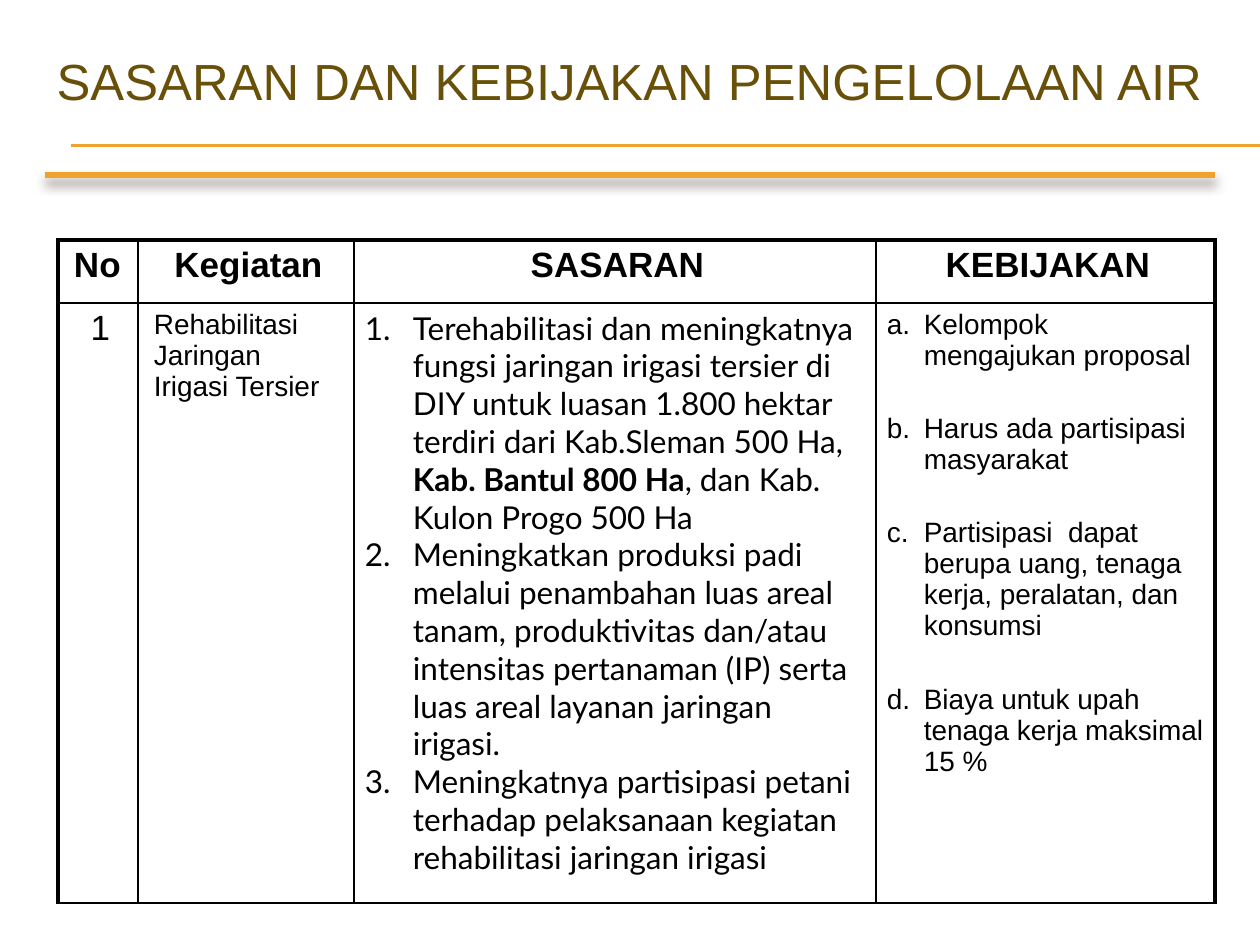
from lxml import etree
from pptx import Presentation
from pptx.dml.color import RGBColor
from pptx.enum.shapes import MSO_CONNECTOR
from pptx.enum.text import MSO_ANCHOR, PP_ALIGN
from pptx.oxml import parse_xml
from pptx.oxml.ns import nsdecls, qn
from pptx.util import Emu, Pt

BLACK = RGBColor(0x00, 0x00, 0x00)
WHITE = RGBColor(0xFF, 0xFF, 0xFF)
BROWN = RGBColor(0x69, 0x50, 0x08)
ORANGE = RGBColor(0xF0, 0xA2, 0x2E)
SHADOW = RGBColor(0x4E, 0x3B, 0x30)

TITLE = "SASARAN DAN KEBIJAKAN PENGELOLAAN AIR"
HEADERS = ["No", "Kegiatan", "SASARAN", "KEBIJAKAN"]
NUMBER = "1"
ACTIVITY = "Rehabilitasi Jaringan Irigasi Tersier"
# Each target is a list of (text, bold) runs
TARGETS = [
    [("Terehabilitasi dan meningkatnya fungsi jaringan irigasi tersier di DIY "
      "untuk luasan 1.800 hektar terdiri dari Kab.Sleman 500 Ha, ", False),
     ("Kab. Bantul 800 Ha", True),
     (", dan Kab. Kulon Progo 500 Ha", False)],
    [("Meningkatkan produksi padi melalui penambahan luas areal tanam, "
      "produktivitas dan/atau intensitas pertanaman (IP) serta luas areal "
      "layanan jaringan irigasi.", False)],
    [("Meningkatnya partisipasi petani terhadap pelaksanaan kegiatan "
      "rehabilitasi jaringan irigasi", False)],
]
POLICIES = [
    "Kelompok mengajukan proposal",
    "Harus ada partisipasi masyarakat",
    "Partisipasi  dapat berupa uang, tenaga kerja, peralatan, dan konsumsi",
    "Biaya untuk upah tenaga kerja maksimal 15 %",
]

# Rules under the title: left, right, y, width in points, shadow
RULES = [(71, 1260, 145, 0.75, False),
         (71, 1260, 146, 0.75, False),
         (45, 1215, 175, 3, True)]
TABLE_LEFT, TABLE_TOP = 58, 240
COLUMN_WIDTHS = [80, 216, 522, 339]
ROW_HEIGHTS = [63, 600]
THIN, THICK = Pt(1), Pt(2.25)


def px(length):
    return Emu(round(length * 914400 / 126))


def add_rule(slide, left, right, y, width, shadowed):
    rule = slide.shapes.add_connector(
        MSO_CONNECTOR.STRAIGHT, px(left), px(y), px(right), px(y))
    rule.line.color.rgb = ORANGE
    rule.line.width = Pt(width)
    effects = etree.SubElement(rule._element.spPr, qn("a:effectLst"))
    if shadowed:
        effects.append(parse_xml(
            f'<a:outerShdw {nsdecls("a")} blurRad="{Pt(6)}" dist="{Pt(4)}" '
            f'dir="5400000" rotWithShape="0"><a:srgbClr val="{SHADOW}">'
            '<a:alpha val="60000"/></a:srgbClr></a:outerShdw>'))


def set_borders(cell, **widths):
    properties = cell._tc.get_or_add_tcPr()
    for index, (side, width) in enumerate(widths.items()):
        properties.insert(index, parse_xml(
            f'<a:ln{side} {nsdecls("a")} w="{width}"><a:solidFill>'
            f'<a:srgbClr val="{BLACK}"/></a:solidFill></a:ln{side}>'))


def add_paragraph(cell, runs, size, font="Arial", align=PP_ALIGN.LEFT,
                  indent=5, numbering=None, gap=0):
    frame = cell.text_frame
    first = not frame.text
    paragraph = frame.paragraphs[0] if first else frame.add_paragraph()
    for text, bold in runs:
        run = paragraph.add_run()
        run.text = text
        run.font.bold = bold
    paragraph.alignment = align
    paragraph.space_before = Pt(0 if first else gap)
    paragraph.font.size = Pt(size)
    paragraph.font.name = font
    paragraph.font.color.rgb = BLACK
    properties = paragraph._p.get_or_add_pPr()
    properties.set("marL", str(px(indent)))
    if numbering:
        properties.set("indent", str(-px(indent)))
        # Bullets come before the default run properties
        properties.find(qn("a:defRPr")).addprevious(parse_xml(
            f'<a:buFont {nsdecls("a")} typeface="{font}"/>'))
        properties.find(qn("a:defRPr")).addprevious(parse_xml(
            f'<a:buAutoNum {nsdecls("a")} type="{numbering}"/>'))


prs = Presentation()
prs.slide_width, prs.slide_height = px(1260), px(945)
slide = prs.slides.add_slide(prs.slide_layouts[5])

# Title
title = slide.shapes.title
title.left, title.top, title.width, title.height = px(0), px(33), px(1260), px(95)
title.text_frame.text = TITLE
title.text_frame.vertical_anchor = MSO_ANCHOR.MIDDLE
heading = title.text_frame.paragraphs[0]
heading.alignment = PP_ALIGN.CENTER
heading.font.size = Pt(29)
heading.font.name = "Arial"
heading.font.color.rgb = BROWN

# Rules
for rule in RULES:
    add_rule(slide, *rule)

# Table grid
table = slide.shapes.add_table(
    len(ROW_HEIGHTS), len(COLUMN_WIDTHS), px(TABLE_LEFT), px(TABLE_TOP),
    px(sum(COLUMN_WIDTHS)), px(sum(ROW_HEIGHTS))).table
table.first_row = table.horz_banding = False
for column, width in zip(table.columns, COLUMN_WIDTHS):
    column.width = px(width)
last = len(COLUMN_WIDTHS) - 1
for r, height in enumerate(ROW_HEIGHTS):
    table.rows[r].height = px(height)
    for c, cell in enumerate(table.rows[r].cells):
        cell.margin_left = cell.margin_right = px(11)
        cell.margin_top = cell.margin_bottom = px(6)
        cell.fill.solid()
        cell.fill.fore_color.rgb = WHITE
        set_borders(cell, L=THICK if c == 0 else THIN,
                    R=THICK if c == last else THIN,
                    T=THICK if r == 0 else THIN, B=THIN)

# Table content
for c, header in enumerate(HEADERS):
    add_paragraph(table.cell(0, c), [(header, True)], 20,
                  align=PP_ALIGN.CENTER if c else PP_ALIGN.LEFT)
number, activity, targets, policies = table.rows[1].cells
add_paragraph(number, [(NUMBER, False)], 20, align=PP_ALIGN.CENTER)
add_paragraph(activity, [(ACTIVITY, False)], 16)
for runs in TARGETS:
    add_paragraph(targets, runs, 18, font="Lato", indent=48,
                  numbering="arabicPeriod")
for policy in POLICIES:
    add_paragraph(policies, [(policy, False)], 16, indent=37,
                  numbering="alphaLcPeriod", gap=24)

prs.save("out.pptx")
